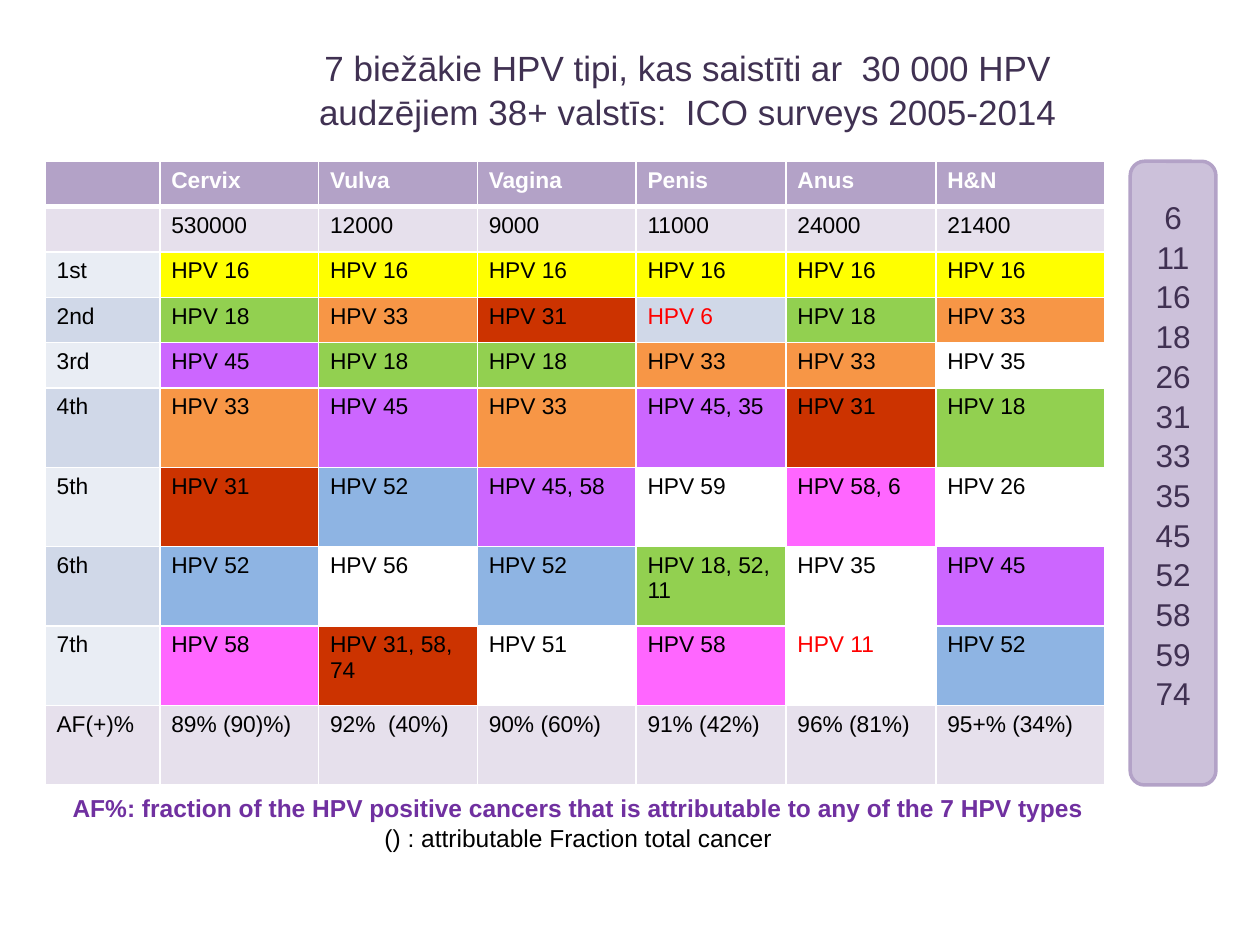
import pptx
import pptx.util
import pptx.dml.color
import pptx.enum.shapes
import pptx.enum.text
import pptx.oxml.ns
from lxml import etree

Inches, Pt = pptx.util.Inches, pptx.util.Pt
qn = pptx.oxml.ns.qn
CENTER = pptx.enum.text.PP_ALIGN.CENTER
MIDDLE = pptx.enum.text.MSO_ANCHOR.MIDDLE

HUES = {
    "ink": "403152", "black": "000000", "white": "FFFFFF", "red": "FF0000",
    "note": "7030A0", "head": "B3A2C7", "pale": "E6E0EC", "panel": "CCC1DA",
    "odd": "E9EDF4", "even": "D0D8E8",
}
# Fill of a cell by the first HPV type it names; other types stay white.
TYPES = {
    "16": "FFFF00", "18": "92D050", "33": "F79646", "31": "CC3300",
    "45": "CC66FF", "52": "8EB4E3", "58": "FF66FF", "6": HUES["even"],
}
RARE = {"6", "11"}

SITES = ["", "Cervix", "Vulva", "Vagina", "Penis", "Anus", "H&N"]
CASES = ["", "530000", "12000", "9000", "11000", "24000", "21400"]
RANKS = [
    ["1st"] + ["16"] * 6,
    ["2nd", "18", "33", "31", "6", "18", "33"],
    ["3rd", "45", "18", "18", "33", "33", "35"],
    ["4th", "33", "45", "33", "45, 35", "31", "18"],
    ["5th", "31", "52", "45, 58", "59", "58, 6", "26"],
    ["6th", "52", "56", "52", "18, 52, 11", "35", "45"],
    ["7th", "58", "31, 58, 74", "51", "58", "11", "52"],
]
SHARES = ["AF(+)%", "89% (90)%)", "92%  (40%)", "90% (60%)",
          "91% (42%)", "96% (81%)", "95+% (34%)"]
WIDTHS = [0.91, 1.26, 1.26, 1.26, 1.19, 1.19, 1.34]
HEIGHTS = [0.36] * 5 + [0.63] * 5
PANEL = "6 11 16 18 26 31 33 35 45 52 58 59 74".split()


def rgb(hue):
    return pptx.dml.color.RGBColor.from_string(hue)


def paint(shape, hue):
    shape.fill.solid()
    shape.fill.fore_color.rgb = rgb(hue)


def write(par, text, size, hue, bold=False):
    run = par.add_run()
    run.text = text
    look = {"name": "Arial", "size": Pt(size), "bold": bold}
    for key, value in look.items():
        setattr(run.font, key, value)
    run.font.color.rgb = rgb(hue)


def fill_frame(frame, lines, **look):
    """Write centred lines, each a tuple of write() arguments."""
    for key, value in {"word_wrap": True, **look}.items():
        setattr(frame, key, value)
    for i, line in enumerate(lines):
        par = frame.add_paragraph() if i else frame.paragraphs[0]
        par.alignment = CENTER
        par.line_spacing = 1.05
        write(par, *line)


def add_title(slide, box):
    title = slide.shapes.title
    title.left, title.top, title.width, title.height = box
    text = ("7 biežākie HPV tipi, kas saistīti ar  30 000 HPV "
            "audzējiem 38+ valstīs:  ICO surveys 2005-2014")
    fill_frame(title.text_frame, [(text, 20, HUES["ink"])],
               vertical_anchor=MIDDLE, margin_bottom=Inches(0.53))


def edge(cell, heavy):
    """Draw white borders, thicker on the sides named in heavy."""
    props = cell._tc.get_or_add_tcPr()
    for i, side in enumerate("LRTB"):
        width = Pt(3 if side in heavy else 1)
        line = etree.Element(qn("a:ln" + side), w=str(width))
        solid = etree.SubElement(line, qn("a:solidFill"))
        etree.SubElement(solid, qn("a:srgbClr"), val=HUES["white"])
        props.insert(i, line)


def set_cell(cell, text, fill, hue=HUES["black"], bold=False, heavy=""):
    cell.margin_left = cell.margin_right = Inches(0.09)
    paint(cell, fill)
    edge(cell, heavy)
    par = cell.text_frame.paragraphs[0]
    if text:
        write(par, text, 13, hue, bold)
    else:
        etree.SubElement(par._p, qn("a:endParaRPr"), sz="1300")


def add_ranks(slide, box):
    grid = slide.shapes.add_table(len(HEIGHTS), len(WIDTHS), *box).table
    for col, width in zip(grid.columns, WIDTHS):
        col.width = Inches(width)
    for row, height in zip(grid.rows, HEIGHTS):
        row.height = Inches(height)

    last = len(HEIGHTS) - 1
    for c in range(len(WIDTHS)):
        set_cell(grid.cell(0, c), SITES[c], HUES["head"], HUES["white"], True, "B")
        set_cell(grid.cell(1, c), CASES[c], HUES["pale"], heavy="T")
        set_cell(grid.cell(last, c), SHARES[c], HUES["pale"])
    for r, (rank, *kinds) in enumerate(RANKS, 2):
        set_cell(grid.cell(r, 0), rank, HUES["even" if r % 2 else "odd"])
        for c, kind in enumerate(kinds, 1):
            fill = TYPES.get(kind.split(",")[0], HUES["white"])
            hue = HUES["red" if kind in RARE else "black"]
            set_cell(grid.cell(r, c), "HPV " + kind, fill, hue)


def add_panel(slide, box):
    form = pptx.enum.shapes.MSO_SHAPE.ROUNDED_RECTANGLE
    panel = slide.shapes.add_shape(form, *box)
    panel.shadow.inherit = False
    paint(panel, HUES["panel"])
    panel.line.color.rgb = rgb(HUES["head"])
    panel.line.width = Pt(2)
    fill_frame(panel.text_frame, [(kind, 18, HUES["ink"]) for kind in PANEL],
               vertical_anchor=MIDDLE, margin_bottom=Inches(0.35))


def add_note(slide, box):
    note = slide.shapes.add_textbox(*box)
    fill_frame(note.text_frame, [
        ("AF%: fraction of the HPV positive cancers that is attributable "
         "to any of the 7 HPV types", 14, HUES["note"], True),
        ("() : attributable Fraction total cancer", 14, HUES["black"]),
    ])


def main():
    deck = pptx.Presentation()
    deck.slide_width, deck.slide_height = Inches(10), Inches(7.5)
    slide = deck.slides.add_slide(deck.slide_layouts.get_by_name("Title Only"))
    parts = [
        (add_title, (1.95, 0.35, 7.02, 1.18)),
        (add_ranks, (0.36, 1.28, 8.43, 4.95)),
        (add_panel, (8.97, 1.28, 0.68, 4.95)),
        (add_note, (-0.32, 6.23, 9.82, 0.57)),
    ]
    for add, box in parts:
        add(slide, [Inches(side) for side in box])
    deck.save("out.pptx")


if __name__ == "__main__":
    main()
